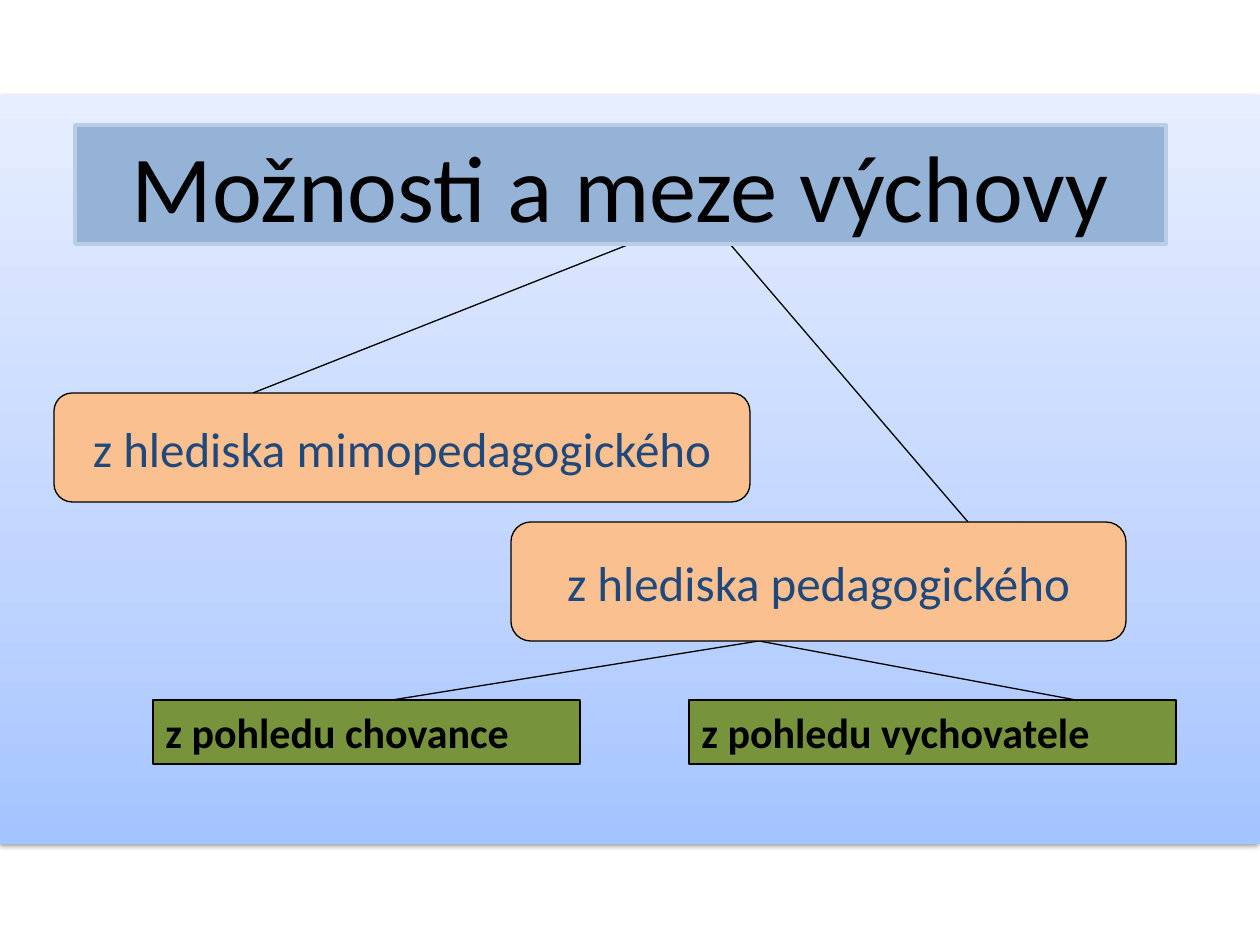
from copy import deepcopy
from lxml import etree
from pptx import Presentation
from pptx.dml.color import RGBColor
from pptx.enum.shapes import MSO_CONNECTOR, MSO_SHAPE
from pptx.enum.text import MSO_ANCHOR, MSO_AUTO_SIZE, PP_ALIGN
from pptx.oxml import parse_xml
from pptx.oxml.ns import nsdecls, qn
from pptx.util import Pt

RECTANGLE, ROUNDED = MSO_SHAPE.RECTANGLE, MSO_SHAPE.ROUNDED_RECTANGLE
STRAIGHT = MSO_CONNECTOR.STRAIGHT
MIDDLE, TOP = MSO_ANCHOR.MIDDLE, MSO_ANCHOR.TOP
CENTER, LEFT = PP_ALIGN.CENTER, PP_ALIGN.LEFT
NO_FIT, GROW = MSO_AUTO_SIZE.NONE, MSO_AUTO_SIZE.SHAPE_TO_FIT_TEXT
SCALE = 914400 / 126


def px(*lengths):
    return [round(length * SCALE) for length in lengths]


def style(box, fill, line, width, text, size, color, align, anchor, bold=False):
    box.fill.solid()
    box.fill.fore_color.rgb = RGBColor.from_string(fill)
    box.line.color.rgb = RGBColor.from_string(line)
    box.line.width = Pt(width)
    box.shadow.inherit = False
    frame = box.text_frame
    frame.vertical_anchor = anchor
    para = frame.paragraphs[0]
    para.alignment = align
    span = para.add_run()
    span.text = text
    span.font.name = "Calibri"
    span.font.size = Pt(size)
    span.font.bold = bold
    span.font.color.rgb = RGBColor.from_string(color)
    return frame


deck = Presentation()
deck.slide_width, deck.slide_height = px(1260, 945)
page = deck.slides.add_slide(deck.slide_layouts[5])
shapes = page.shapes

panel = shapes.add_shape(RECTANGLE, *px(0, 95, 1260, 749))
panel.line.fill.background()
panel.fill.gradient()
panel.fill.gradient_angle = 90
stop_list = panel.element.spPr.find(qn("a:gradFill")).find(qn("a:gsLst"))
stop_list.append(deepcopy(stop_list[-1]))
stops = [(0, "A4C4FF"), (0.35, "BFD4FF"), (1, "E6EEFF")]
for stop, (position, color) in zip(panel.fill.gradient_stops, stops):
    stop.position = position
    stop.color.rgb = RGBColor.from_string(color)
panel.element.spPr.append(parse_xml(
    f'<a:effectLst {nsdecls("a")}>'
    '<a:outerShdw blurRad="40000" dist="20000" dir="5400000" rotWithShape="0">'
    '<a:srgbClr val="000000"><a:alpha val="38000"/></a:srgbClr>'
    '</a:outerShdw></a:effectLst>'))

branches = [
    (630, 244, 253, 393),
    (730, 244, 968, 522),
    (759, 641, 392, 700),
    (759, 641, 1076, 700),
]
for ends in branches:
    branch = shapes.add_connector(STRAIGHT, *px(*ends))
    branch.line.color.rgb = RGBColor.from_string("000000")
    branch.line.width = Pt(0.75)
    etree.SubElement(branch.element.spPr, qn("a:effectLst"))

viewpoints = [
    ("z hlediska mimopedagogického", (54, 393, 696, 109)),
    ("z hlediska pedagogického", (511, 522, 615, 119)),
]
for text, place in viewpoints:
    box = shapes.add_shape(ROUNDED, *px(*place))
    frame = style(box, "FAC090", "000000", 0.75, text, 28, "1F497D", CENTER, MIDDLE)
    frame.word_wrap = False
    frame.margin_left, frame.margin_right = px(8, 8)
    frame.margin_top, frame.margin_bottom = px(4, 4)

perspectives = [
    ("z pohledu chovance", 153, 427),
    ("z pohledu vychovatele", 689, 487),
]
for text, left, width in perspectives:
    box = shapes.add_shape(RECTANGLE, *px(left, 700, width, 64))
    frame = style(box, "77933C", "000000", 0.75, text, 24, "000000", LEFT, TOP, True)
    frame.word_wrap = True
    frame.auto_size = GROW

title = shapes.title
title.left, title.top, title.width, title.height = px(75, 125, 1091, 119)
title.element.spPr.append(parse_xml(
    f'<a:prstGeom {nsdecls("a")} prst="roundRect"><a:avLst/></a:prstGeom>'))
frame = style(title, "95B3D7", "B9CDE5", 2, "Možnosti a meze výchovy", 54, "000000", CENTER, MIDDLE)
frame.word_wrap = True
frame.auto_size = NO_FIT
panel.element.getparent().append(title.element)

deck.save("out.pptx")
